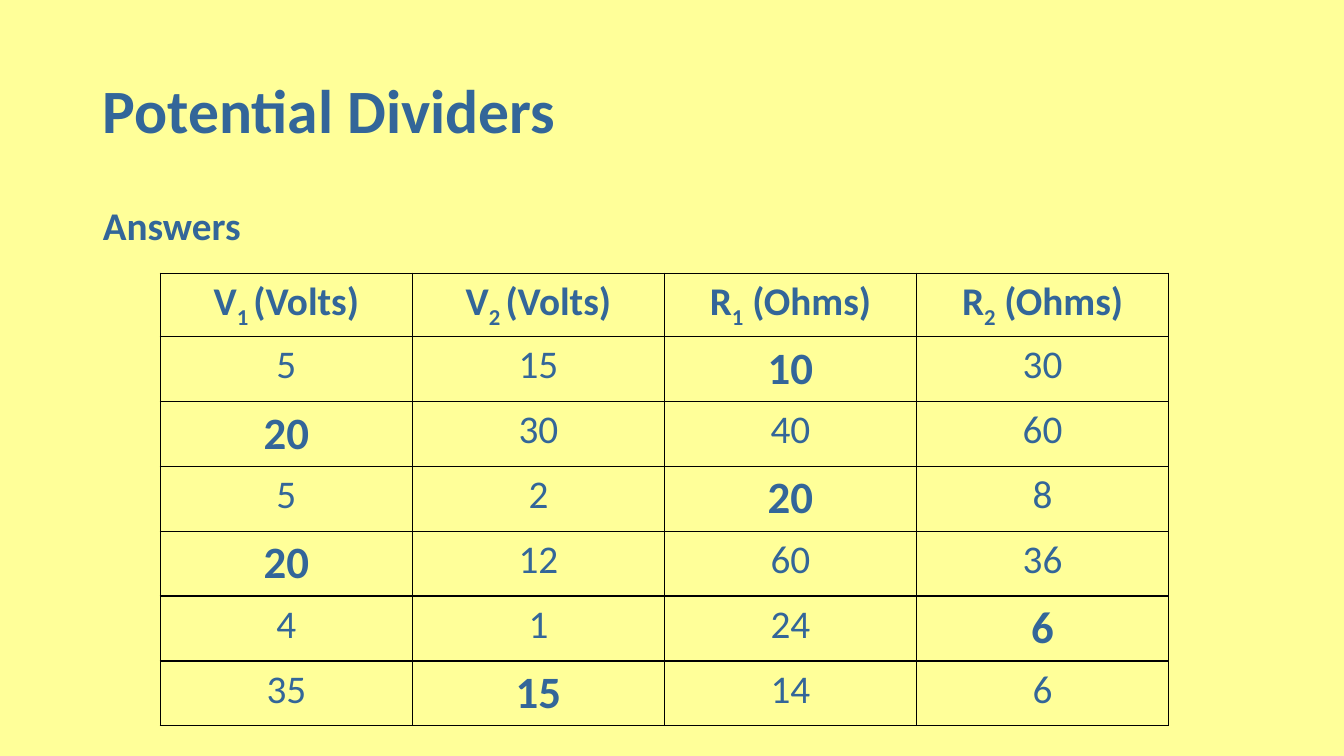
from typing import NamedTuple

from lxml import etree
from pptx import Presentation
from pptx.dml.color import RGBColor
from pptx.enum.text import MSO_ANCHOR, MSO_AUTO_SIZE, PP_ALIGN
from pptx.oxml.ns import qn
from pptx.util import Inches, Pt

LEFT, CENTER = PP_ALIGN.LEFT, PP_ALIGN.CENTER
TOP, MIDDLE = MSO_ANCHOR.TOP, MSO_ANCHOR.MIDDLE
NO_AUTOFIT = MSO_AUTO_SIZE.NONE

COLORS = {"background": "FFFF99", "text": "336699", "border": "000000"}
FONT = "Calibri"
BORDER_WIDTH = 1
COLUMN_WIDTH, HEADER_HEIGHT, ROW_HEIGHT = 2.5, 0.62, 0.64


class Heading(NamedTuple):
    symbol: str
    subscript: str
    unit: str


class Value(NamedTuple):
    number: int
    is_answer: bool = False


HEADINGS = [
    Heading("V", "1 ", "(Volts)"),
    Heading("V", "2 ", "(Volts)"),
    Heading("R", "1", " (Ohms)"),
    Heading("R", "2", " (Ohms)"),
]
ROWS = [
    [Value(5), Value(15), Value(10, True), Value(30)],
    [Value(20, True), Value(30), Value(40), Value(60)],
    [Value(5), Value(2), Value(20, True), Value(8)],
    [Value(20, True), Value(12), Value(60), Value(36)],
    [Value(4), Value(1), Value(24), Value(6, True)],
    [Value(35), Value(15, True), Value(14), Value(6)],
]


def format_paragraph(p, size: float, bold: bool, align) -> None:
    p.alignment = align
    p.font.name = FONT
    p.font.size = Pt(size)
    p.font.bold = bold
    p.font.color.rgb = RGBColor.from_string(COLORS["text"])


def fill_placeholder(sp, text: str, top: float, height: float,
                     size: float, anchor, space_before: float) -> None:
    sp.left, sp.top = Inches(0.92), Inches(top)
    sp.width, sp.height = Inches(11.5), Inches(height)
    tf = sp.text_frame
    tf.text = text
    tf.word_wrap = True
    tf.auto_size = NO_AUTOFIT
    tf.vertical_anchor = anchor
    p = tf.paragraphs[0]
    format_paragraph(p, size, True, LEFT)
    p.line_spacing = 0.9
    p.space_before = Pt(space_before)


def remove_bullet(p) -> None:
    pPr = p._p.get_or_add_pPr()
    pPr.set("marL", "0")
    pPr.set("indent", "0")
    pPr.insert_element_before(etree.Element(qn("a:buNone")),
                              "a:tabLst", "a:defRPr", "a:extLst")


def style_cell(cell) -> None:
    tcPr = cell._tc.get_or_add_tcPr()
    for side in ("a:lnL", "a:lnR", "a:lnT", "a:lnB"):
        line = etree.SubElement(tcPr, qn(side), w=str(Pt(BORDER_WIDTH)))
        fill = etree.SubElement(line, qn("a:solidFill"))
        etree.SubElement(fill, qn("a:srgbClr"), val=COLORS["border"])
    cell.fill.background()


def write_heading(cell, heading: Heading) -> None:
    p = cell.text_frame.paragraphs[0]
    for text in heading:
        r = p.add_run()
        r.text = text
        if text == heading.subscript:
            r._r.get_or_add_rPr().set("baseline", "-25000")
    format_paragraph(p, 28, True, CENTER)


def write_value(cell, value: Value) -> None:
    cell.text = str(value.number)
    size = 32 if value.is_answer else 28
    format_paragraph(cell.text_frame.paragraphs[0], size, value.is_answer, CENTER)


def add_answer_table(s) -> None:
    width = COLUMN_WIDTH * len(HEADINGS)
    height = HEADER_HEIGHT + ROW_HEIGHT * len(ROWS)
    table = s.shapes.add_table(len(ROWS) + 1, len(HEADINGS), Inches(1.59),
                               Inches(2.71), Inches(width), Inches(height)).table
    table.first_row = table.horz_banding = False
    for row in table.rows:
        row.height = Inches(ROW_HEIGHT)
    table.rows[0].height = Inches(HEADER_HEIGHT)
    for cell in table.iter_cells():
        style_cell(cell)
    for column, heading in enumerate(HEADINGS):
        write_heading(table.cell(0, column), heading)
    for row, values in enumerate(ROWS, start=1):
        for column, value in enumerate(values):
            write_value(table.cell(row, column), value)


def main() -> None:
    prs = Presentation()
    prs.slide_width, prs.slide_height = Inches(13.33), Inches(7.5)
    s = prs.slides.add_slide(prs.slide_layouts[1])

    # Background
    s.background.fill.solid()
    s.background.fill.fore_color.rgb = RGBColor.from_string(COLORS["background"])

    # Title and subheading
    fill_placeholder(s.shapes.title, "Potential Dividers", 0.4, 1.45, 44, MIDDLE, 0)
    body = s.placeholders[1]
    fill_placeholder(body, "Answers", 2, 4.76, 28, TOP, 10)
    remove_bullet(body.text_frame.paragraphs[0])

    # Table of answers
    add_answer_table(s)

    prs.save("out.pptx")


if __name__ == "__main__":
    main()
